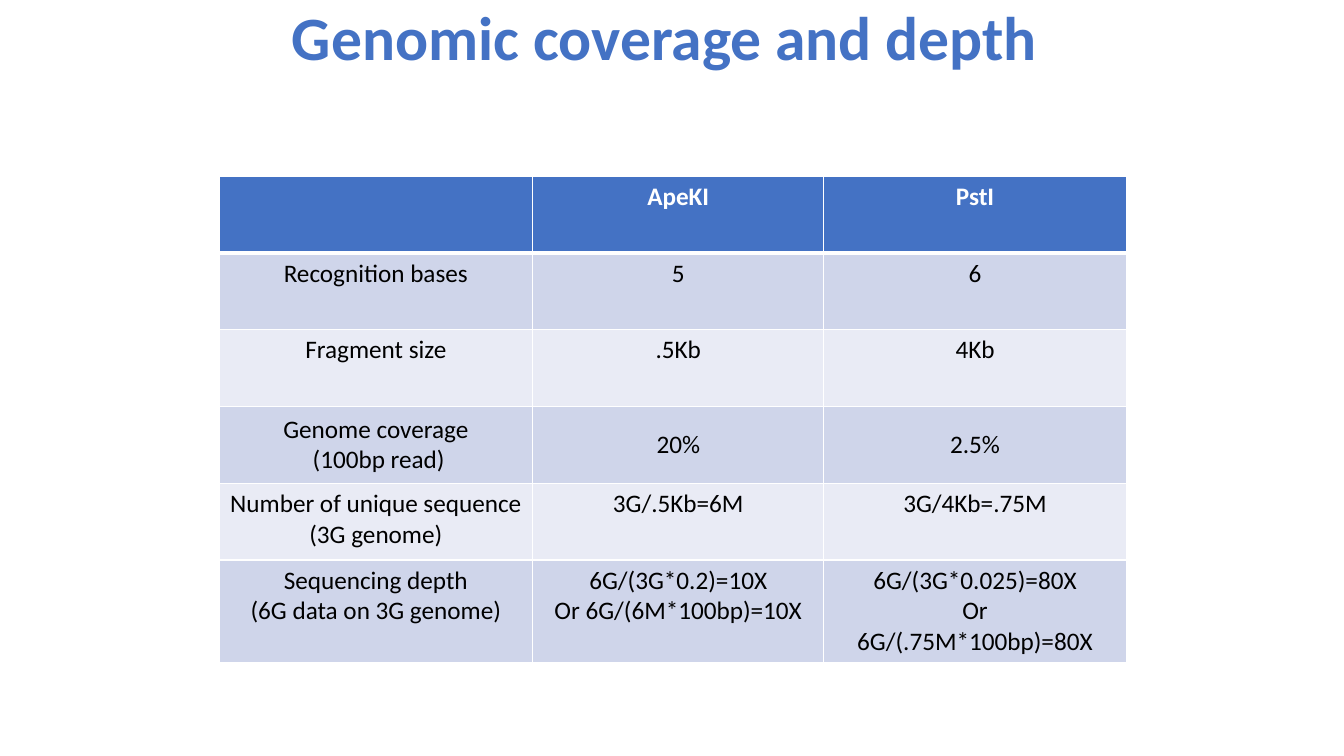
from pptx import Presentation
from pptx.dml.color import RGBColor
from pptx.enum.text import MSO_ANCHOR, MSO_AUTO_SIZE, PP_ALIGN
from pptx.util import Pt
from lxml.etree import SubElement
from pptx.oxml.ns import qn

BLUE = RGBColor(0x44, 0x72, 0xC4)
DARK = RGBColor(0xCF, 0xD5, 0xEA)
PALE = RGBColor(0xE9, 0xEB, 0xF5)
WHITE = RGBColor(255, 255, 255)
BLACK = RGBColor(0, 0, 0)

ROWS = [
    ["", "ApeKI", "PstI"],
    ["Recognition bases", "5", "6"],
    ["Fragment size", ".5Kb", "4Kb"],
    ["Genome coverage\n (100bp read)", "20%", "2.5%"],
    ["Number of unique sequence \n(3G genome)", "3G/.5Kb=6M", "3G/4Kb=.75M"],
    ["Sequencing depth\n(6G data on 3G genome)",
     "6G/(3G*0.2)=10X\nOr 6G/(6M*100bp)=10X",
     "6G/(3G*0.025)=80X\nOr\n6G/(.75M*100bp)=80X"],
]
WIDTHS = [224, 208, 216]
HEIGHT = 54.8
COVER = 3


class Deck:
    font = "Calibri"

    def __init__(self):
        self.prs = Presentation()
        self.prs.slide_width, self.prs.slide_height = Pt(960), Pt(540)
        self.slide = self.prs.slides.add_slide(self.prs.slide_layouts[5])

    def style(self, frame, color, **form):
        for para in frame.paragraphs:
            para.alignment = PP_ALIGN.CENTER
            for key, val in {"name": self.font, **form}.items():
                setattr(para.font, key, val)
            para.font.color.rgb = color

    def title(self, text, left, top, width, height):
        box = self.slide.shapes.title
        place = {"left": left, "top": top, "width": width, "height": height}
        for key, val in place.items():
            setattr(box, key, Pt(val))
        frame = box.text_frame
        frame.text = text
        frame.auto_size = MSO_AUTO_SIZE.NONE
        frame.vertical_anchor = MSO_ANCHOR.MIDDLE
        frame.paragraphs[0].line_spacing = 0.9
        self.style(frame, BLUE, size=Pt(44), bold=True)

    def border(self, cell, widths):
        props = cell._tc.get_or_add_tcPr()
        for side, width in widths.items():
            line = SubElement(props, qn("a:ln" + side), w=str(Pt(width)))
            fill = SubElement(line, qn("a:solidFill"))
            SubElement(fill, qn("a:srgbClr"), val=str(WHITE))

    def cell(self, cell, text, row):
        head = row == 0
        self.border(cell, {"L": 1, "R": 1, "T": 3 if row == 1 else 1,
                           "B": 3 if head else 1})
        cell.fill.solid()
        cell.fill.fore_color.rgb = BLUE if head else DARK if row % 2 else PALE
        cell.text = text
        mid = row == COVER
        cell.vertical_anchor = MSO_ANCHOR.MIDDLE if mid else MSO_ANCHOR.TOP
        self.style(cell.text_frame, WHITE if head else BLACK, size=Pt(18), bold=head)

    def table(self, rows, widths, left, top, height):
        size = Pt(sum(widths)), Pt(height * len(rows))
        table = self.slide.shapes.add_table(
            len(rows), len(widths), Pt(left), Pt(top), *size).table
        for col, width in zip(table.columns, widths):
            col.width = Pt(width)
        for r, texts in enumerate(rows):
            table.rows[r].height = Pt(height)
            for c, text in enumerate(texts):
                self.cell(table.cell(r, c), text, r)


def main():
    deck = Deck()
    deck.title("Genomic coverage and depth ", 156, 0, 648, 58.5)
    deck.table(ROWS, WIDTHS, 156.5, 126, HEIGHT)
    deck.prs.save("out.pptx")


if __name__ == "__main__":
    main()
